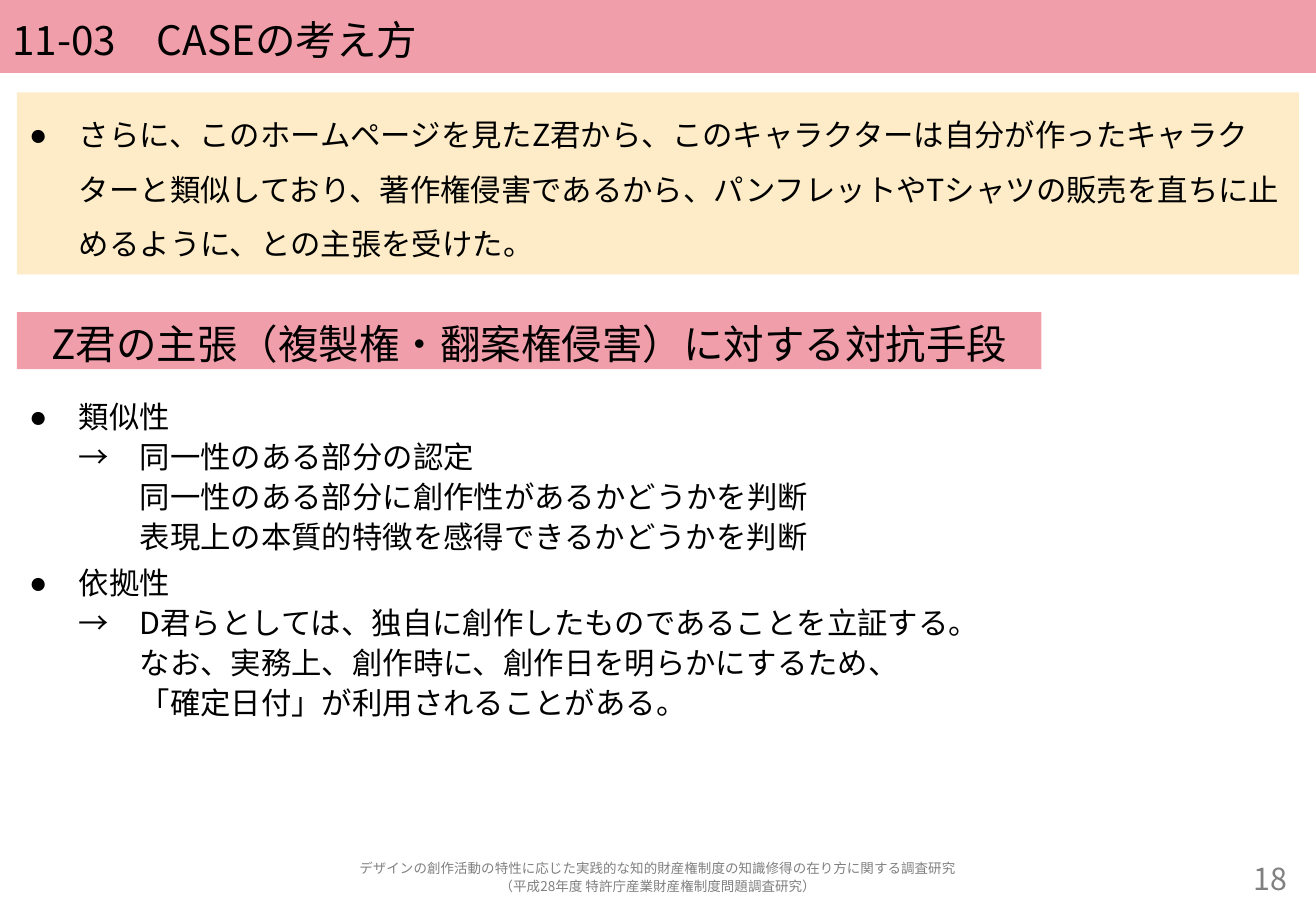
from dataclasses import dataclass

from lxml import etree
from pptx import Presentation
from pptx.dml.color import RGBColor
from pptx.enum.shapes import MSO_SHAPE
from pptx.enum.text import MSO_ANCHOR, MSO_AUTO_SIZE, PP_ALIGN
from pptx.oxml.ns import qn
from pptx.util import Inches, Pt

LEFT, CENTER, RIGHT = PP_ALIGN.LEFT, PP_ALIGN.CENTER, PP_ALIGN.RIGHT
TOP, MIDDLE = MSO_ANCHOR.TOP, MSO_ANCHOR.MIDDLE
NO_AUTOFIT = MSO_AUTO_SIZE.NONE
RECTANGLE = MSO_SHAPE.RECTANGLE

FONT = "Noto Sans CJK JP"
COLORS = {"pink": "F09FAA", "cream": "FDECC7", "text": "000000", "muted": "808080"}
SLIDE_WIDTH, SLIDE_HEIGHT = Inches(10.83), Inches(7.5)
BULLET_INDENT = Inches(0.41)
DETAIL_INDENT = Pt(36)  # two full-width characters of the 18 pt text
BULLET_GAP = Pt(3.6)
TIGHT, LOOSE, SMALL = Pt(23.7), Pt(32.3), Pt(10.6)


@dataclass(frozen=True)
class Area:
    """Left, top, width and height in percent of the slide's size."""
    left: float
    top: float
    width: float
    height: float

    def emu(self) -> list[int]:
        return [round(share * side / 100) for share, side in (
            (self.left, SLIDE_WIDTH), (self.top, SLIDE_HEIGHT),
            (self.width, SLIDE_WIDTH), (self.height, SLIDE_HEIGHT))]


@dataclass(frozen=True)
class TextStyle:
    size: int
    spacing: float = 1.1
    align: int = LEFT
    anchor: int = MIDDLE
    color: str = "text"


@dataclass(frozen=True)
class Topic:
    """A bulleted point; its first detail line follows an arrow."""
    heading: str
    details: tuple[str, ...] = ()


HEADING = TextStyle(24)
BANNER = TextStyle(24, align=CENTER)
CASE_TEXT = TextStyle(18, LOOSE, anchor=TOP)
TOPIC_TEXT = TextStyle(18, TIGHT, anchor=TOP)
PAGE_NUMBER = TextStyle(18, align=RIGHT, color="muted")
FOOTER = TextStyle(8, SMALL, CENTER, color="muted")

TITLE_AREA = Area(0, 0, 100, 8)
CASE_AREA = Area(1.29, 10.13, 97.41, 20)
BANNER_AREA = Area(1.29, 34.27, 77.84, 6.27)
TOPICS_AREA = Area(1.29, 42.67, 97.41, 49.33)
NUMBER_AREA = Area(86.33, 94.13, 12.37, 4.13)
FOOTER_AREA = Area(1.29, 94.13, 97.41, 4.13)

CASE = [Topic(
    "さらに、このホームページを見たZ君から、このキャラクターは自分が作ったキャラクターと"
    "類似しており、著作権侵害であるから、パンフレットやTシャツの販売を直ちに止めるように、"
    "との主張を受けた。")]
DEFENCES = [
    Topic("類似性", (
        "同一性のある部分の認定",
        "同一性のある部分に創作性があるかどうかを判断",
        "表現上の本質的特徴を感得できるかどうかを判断")),
    Topic("依拠性", (
        "D君らとしては、独自に創作したものであることを立証する。",
        "なお、実務上、創作時に、創作日を明らかにするため、",
        "「確定日付」が利用されることがある。")),
]


def place(shape, area: Area) -> None:
    shape.left, shape.top, shape.width, shape.height = area.emu()


def fill(shape, color: str) -> None:
    shape.fill.solid()
    shape.fill.fore_color.rgb = RGBColor.from_string(COLORS[color])


def write(shape, text: str, style: TextStyle) -> None:
    frame = shape.text_frame
    frame.text = text
    frame.word_wrap = True
    frame.auto_size = NO_AUTOFIT
    frame.vertical_anchor = style.anchor
    for paragraph in frame.paragraphs:
        paragraph.alignment = style.align
        paragraph.line_spacing = style.spacing
        paragraph.space_before = Pt(0)
        for run in paragraph.runs:
            run.font.size = Pt(style.size)
            run.font.color.rgb = RGBColor.from_string(COLORS[style.color])
            run.font.name = FONT
            etree.SubElement(run.font._element, qn("a:ea"), typeface=FONT)


def indent(paragraph, margin: int, first_line: int, bullet: str = "") -> None:
    properties = paragraph._p.get_or_add_pPr()
    properties.set("marL", str(margin))
    properties.set("indent", str(first_line))
    if bullet:
        etree.SubElement(properties, qn("a:buChar"), char=bullet)
    else:
        etree.SubElement(properties, qn("a:buNone"))


def write_topics(shape, topics: list[Topic], style: TextStyle) -> None:
    lines: list[str] = []
    heading_rows: set[int] = set()
    arrow_rows: set[int] = set()
    for topic in topics:
        heading_rows.add(len(lines))
        lines.append(topic.heading)
        if topic.details:
            arrow_rows.add(len(lines))
            lines += ["→　" + topic.details[0], *topic.details[1:]]
    write(shape, "\n".join(lines), style)
    for row, paragraph in enumerate(shape.text_frame.paragraphs):
        if row in heading_rows:
            paragraph.space_before = BULLET_GAP if row else Pt(0)
            indent(paragraph, BULLET_INDENT, -BULLET_INDENT, "●")
        else:
            hanging = -DETAIL_INDENT if row in arrow_rows else 0
            indent(paragraph, BULLET_INDENT + DETAIL_INDENT, hanging)


def add_label(slide, area: Area, text: str, style: TextStyle) -> None:
    label = slide.shapes.add_textbox(*area.emu())
    write(label, text, style)
    label.text_frame.margin_top = label.text_frame.margin_bottom = 0


def main() -> None:
    deck = Presentation()
    deck.slide_width, deck.slide_height = SLIDE_WIDTH, SLIDE_HEIGHT
    two_content = deck.slide_layouts[3]
    slide = deck.slides.add_slide(two_content)
    title, case, defences = slide.placeholders

    place(title, TITLE_AREA)
    fill(title, "pink")
    write(title, "11-03　CASEの考え方", HEADING)

    place(case, CASE_AREA)
    fill(case, "cream")
    write_topics(case, CASE, CASE_TEXT)

    banner = slide.shapes.add_shape(RECTANGLE, *BANNER_AREA.emu())
    banner.shadow.inherit = False
    banner.line.fill.background()
    fill(banner, "pink")
    write(banner, "Z君の主張（複製権・翻案権侵害）に対する対抗手段", BANNER)

    place(defences, TOPICS_AREA)
    write_topics(defences, DEFENCES, TOPIC_TEXT)

    add_label(slide, NUMBER_AREA, "18", PAGE_NUMBER)
    add_label(
        slide, FOOTER_AREA,
        "デザインの創作活動の特性に応じた実践的な知的財産権制度の知識修得の在り方に関する調査研究\n"
        "（平成28年度 特許庁産業財産権制度問題調査研究）", FOOTER)
    deck.save("out.pptx")


if __name__ == "__main__":
    main()
